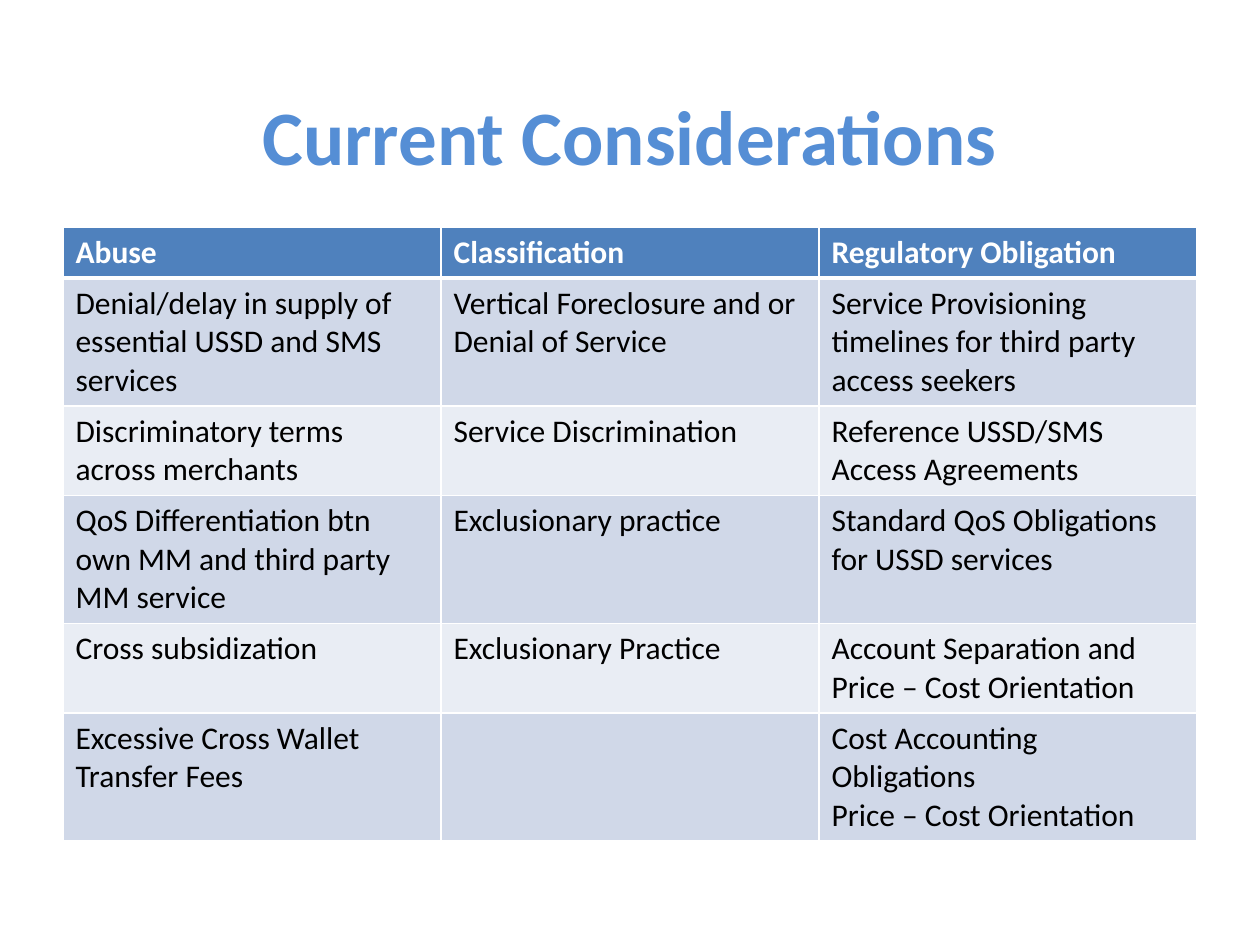
from lxml import etree
from pptx import Presentation
from pptx.dml.color import RGBColor
from pptx.enum import text
from pptx.oxml import ns
from pptx.util import Inches, Pt

ROWS = [
    ("Abuse", "Classification", "Regulatory Obligation"),
    ("Denial/delay in supply of essential USSD and SMS services",
     "Vertical Foreclosure and or Denial of Service",
     "Service Provisioning timelines for third party access seekers"),
    ("Discriminatory terms across merchants", "Service Discrimination",
     "Reference USSD/SMS Access Agreements"),
    ("QoS Differentiation btn own MM and third party MM service",
     "Exclusionary practice", "Standard QoS Obligations for USSD services"),
    ("Cross subsidization", "Exclusionary Practice",
     "Account Separation and Price – Cost Orientation"),
    ("Excessive Cross Wallet Transfer Fees", "",
     "Cost Accounting Obligations\nPrice – Cost Orientation"),
]
ROW_HEIGHTS = [0.36, 0.9, 0.63, 0.9, 0.63, 0.9]


def color(value):
    return RGBColor.from_string(value)


def style_font(font, size, value, bold):
    font.name = "Calibri"
    font.size = Pt(size)
    font.bold = bold
    font.color.rgb = color(value)


def add_border(cell, side, width):
    line = etree.SubElement(cell._tc.get_or_add_tcPr(), ns.qn(f"a:ln{side}"),
                            w=str(Pt(width)))
    fill = etree.SubElement(line, ns.qn("a:solidFill"))
    etree.SubElement(fill, ns.qn("a:srgbClr"), val="FFFFFF")


def add_title(slide, left, top, width, height):
    title = slide.shapes.title
    title.left, title.top = Inches(left), Inches(top)
    title.width, title.height = Inches(width), Inches(height)
    frame = title.text_frame
    frame.text = "Current Considerations"
    frame.vertical_anchor = text.MSO_ANCHOR.MIDDLE
    heading = frame.paragraphs[0]
    heading.alignment = text.PP_ALIGN.CENTER
    style_font(heading.runs[0].font, 44, "558ED5", True)


def fill_cell(cell, content, row):
    is_header = row == 0
    # Borders come before the fill in the cell properties
    for side in "LRTB":
        below_header = (is_header and side == "B") or (row == 1 and side == "T")
        add_border(cell, side, 3 if below_header else 1)
    cell.fill.solid()
    band = "D0D8E8" if row % 2 else "E9EDF4"
    cell.fill.fore_color.rgb = color("4F81BD" if is_header else band)
    cell.text_frame.text = content
    for paragraph in cell.text_frame.paragraphs:
        style_font(paragraph.font, 18, "FFFFFF" if is_header else "000000", is_header)
        for run in paragraph.runs:
            style_font(run.font, 18, "FFFFFF" if is_header else "000000", is_header)


def add_considerations(slide, left, top, width, height):
    columns = len(ROWS[0])
    table = slide.shapes.add_table(len(ROWS), columns, Inches(left), Inches(top),
                                   Inches(width), Inches(height)).table
    for column in table.columns:
        column.width = Inches(width / columns)
    for r, (contents, row_height) in enumerate(zip(ROWS, ROW_HEIGHTS)):
        table.rows[r].height = Inches(row_height)
        for c, content in enumerate(contents):
            fill_cell(table.cell(r, c), content, r)


def main():
    deck = Presentation()
    deck.slide_width, deck.slide_height = Inches(10), Inches(7.5)
    slide = deck.slides.add_slide(deck.slide_layouts[5])  # Title Only
    add_title(slide, 0.5, 0.62, 9, 0.9)
    add_considerations(slide, 0.5, 1.8, 9, sum(ROW_HEIGHTS))
    deck.save("out.pptx")


if __name__ == "__main__":
    main()
